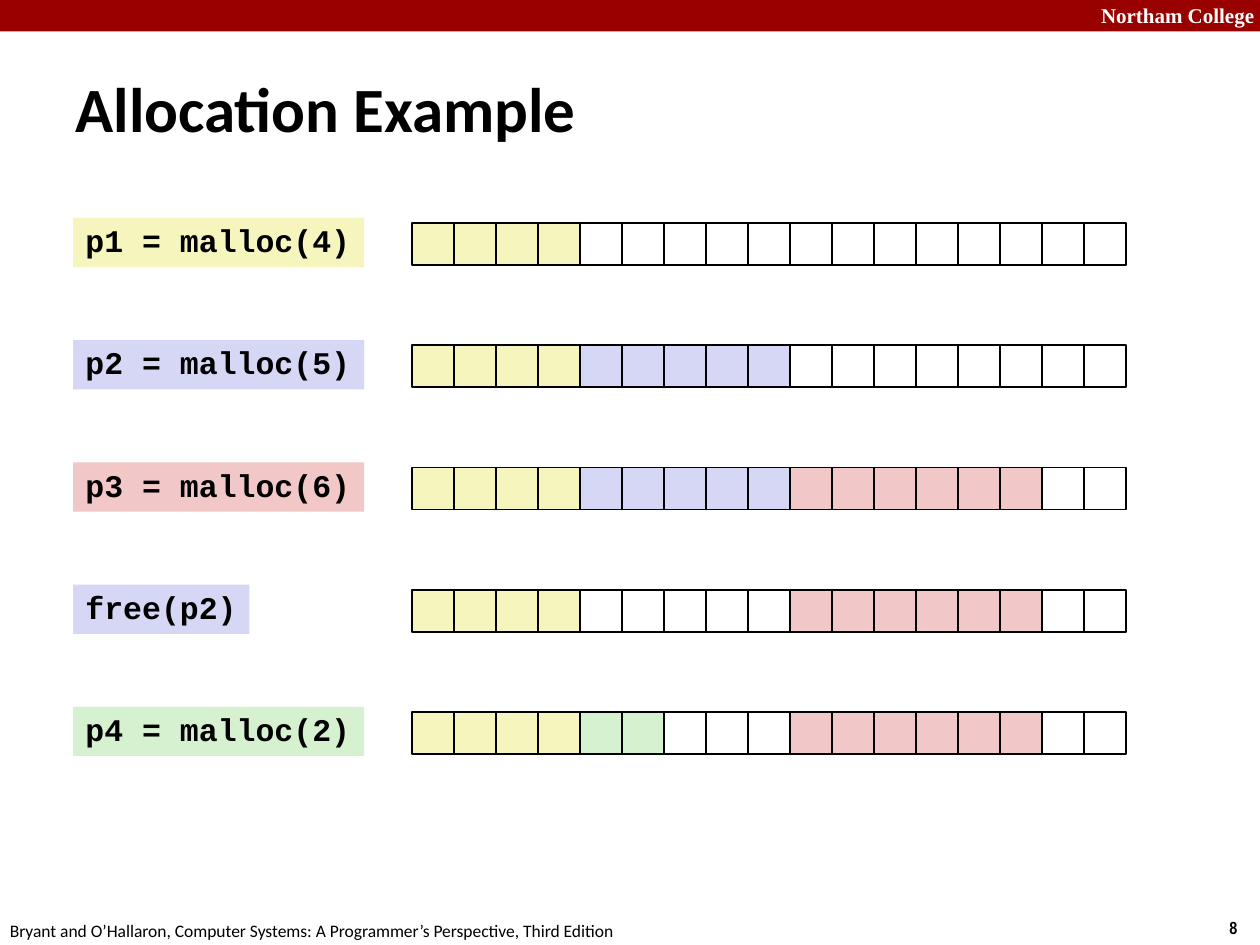
"""Build the Allocation Example slide with its five rows of memory cells."""
from pptx import Presentation
from pptx.dml.color import RGBColor as RGB
from pptx.enum.shapes import MSO_SHAPE as Shape
from pptx.enum.text import MSO_ANCHOR as Anchor, MSO_AUTO_SIZE as Fit, PP_ALIGN as Align
from pptx.util import Inches, Pt

COLORS = {"black": "000000", "white": "FFFFFF", "red": "990000",
          "p1": "F6F5BD", "p2": "D6D6F5", "p3": "F1C7C7", "p4": "D5F1CF"}


def add_box(shapes, left, top, width, height, color):
    box = shapes.add_shape(Shape.RECTANGLE, Inches(left), Inches(top),
                           Inches(width), Inches(height))
    box.shadow.inherit = False
    box.fill.solid()
    box.fill.fore_color.rgb = RGB.from_string(COLORS[color])
    box.line.fill.background()
    return box


def set_text(shape, text, name, size, bold=True, color="black", wrap=False):
    frame = shape.text_frame
    frame.text = text
    frame.word_wrap = wrap
    para = frame.paragraphs[0]
    para.alignment = Align.LEFT
    for key, value in {"name": name, "size": Pt(size), "bold": bold}.items():
        setattr(para.font, key, value)
    para.font.color.rgb = RGB.from_string(COLORS[color])
    return frame


deck = Presentation()
deck.slide_width, deck.slide_height = Inches(10), Inches(7.5)
slide = deck.slides.add_slide(deck.slide_layouts[5])

add_box(slide.shapes, 0, 0, 10, 0.25, "red")

notes = [
    ((8.64, -0.03, 1.43, 0.3), "Northam College", "Times New Roman", 12, True, "white", True),
    ((9.66, 7.23, 0.34, 0.27), "8", "Arial Narrow", 10),
    ((-0.02, 7.25, 5.08, 0.27),
     "Bryant and O’Hallaron, Computer Systems: A Programmer’s Perspective, Third Edition",
     "Calibri", 10, False),
]
for place, *style in notes:
    note = slide.shapes.add_textbox(*map(Inches, place))
    set_text(note, *style).auto_size = Fit.SHAPE_TO_FIT_TEXT

title = slide.shapes.title
place = {"left": 0.5, "top": 0.54, "width": 7.07, "height": 0.63}
for key, value in place.items():
    setattr(title, key, Inches(value))
frame = set_text(title, "Allocation Example", "Calibri", 36, wrap=True)
frame.auto_size = Fit.NONE
frame.vertical_anchor = Anchor.MIDDLE

rows = [
    ("p1 = malloc(4)", "p1", 2.31, [("p1", 4), ("white", 13)]),
    ("p2 = malloc(5)", "p2", 2.31, [("p1", 4), ("p2", 5), ("white", 8)]),
    ("p3 = malloc(6)", "p3", 2.31, [("p1", 4), ("p2", 5), ("p3", 6), ("white", 2)]),
    ("free(p2)", "p2", 1.4, [("p1", 4), ("white", 5), ("p3", 6), ("white", 2)]),
    ("p4 = malloc(2)", "p4", 2.31,
     [("p1", 4), ("p4", 2), ("white", 3), ("p3", 6), ("white", 2)]),
]
side = 1 / 3
for row, (call, color, width, blocks) in enumerate(rows):
    top = 1.73 + 0.97 * row
    heap = slide.shapes.add_group_shape()
    cells = [block for block, count in blocks for _ in range(count)]
    for col, block in enumerate(cells):
        cell = add_box(heap.shapes, 3.27 + side * col, top + 0.04, side, side, block)
        cell.line.color.rgb = RGB.from_string(COLORS["black"])
        cell.line.width = Pt(1)

    label = add_box(slide.shapes, 0.58, top, width, 0.39, color)
    frame = set_text(label, call, "Courier New", 18)
    frame.auto_size = Fit.SHAPE_TO_FIT_TEXT
    frame.vertical_anchor = Anchor.TOP
    frame.paragraphs[0].line_spacing = 0.94

deck.save("out.pptx")
